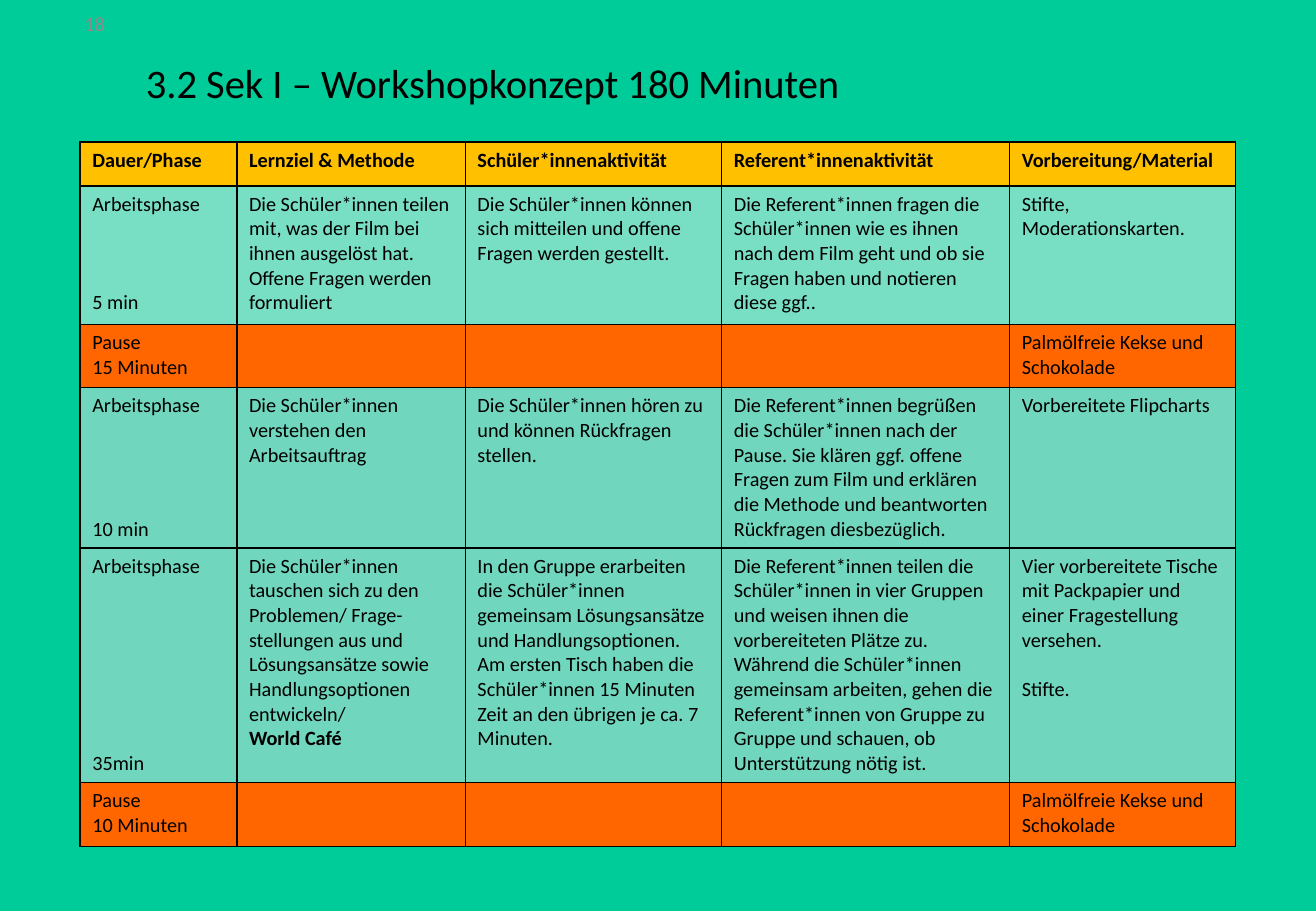
import pptx
import pptx.util
import pptx.dml.color
import pptx.enum.text
import pptx.oxml
import pptx.oxml.ns

Inches = pptx.util.Inches
Pt = pptx.util.Pt
RGBColor = pptx.dml.color.RGBColor
ALIGN = pptx.enum.text.PP_ALIGN
MIDDLE = pptx.enum.text.MSO_ANCHOR.MIDDLE

GREEN = RGBColor(0x00, 0xCC, 0x99)
AMBER = RGBColor(0xFF, 0xC0, 0x00)
ORANGE = RGBColor(0xFF, 0x66, 0x00)
PALE = RGBColor(0xF0, 0xF0, 0xF0)
SILVER = RGBColor(0xE1, 0xE1, 0xE1)
GREY = RGBColor(0x8C, 0x8C, 0x8C)
BLACK = RGBColor(0x00, 0x00, 0x00)

LINE = 14.65
SNACK = "Palmölfreie Kekse und Schokolade"
COLS = [1.29, 1.88, 2.11, 2.37, 1.86]
ROWS = [
    (0.36, AMBER, 100, 0, [
        "Dauer/Phase", "Lernziel & Methode", "Schüler*innenaktivität",
        "Referent*innenaktivität", "Vorbereitung/Material"]),
    (1.14, PALE, 50, 3, [
        "Arbeitsphase\n5 min",
        "Die Schüler*innen teilen mit, was der Film bei ihnen ausgelöst hat. "
        "Offene Fragen werden formuliert",
        "Die Schüler*innen können sich mitteilen und offene Fragen werden gestellt.",
        "Die Referent*innen fragen die Schüler*innen wie es ihnen nach dem Film geht "
        "und ob sie Fragen haben und notieren diese ggf..",
        "Stifte, Moderationskarten."]),
    (0.52, ORANGE, 100, 0, ["Pause\n15 Minuten", "", "", "", SNACK]),
    (1.32, SILVER, 50, 4, [
        "Arbeitsphase\n10 min",
        "Die Schüler*innen verstehen den Arbeitsauftrag",
        "Die Schüler*innen hören zu und können Rückfragen stellen.",
        "Die Referent*innen begrüßen die Schüler*innen nach der Pause. Sie klären ggf. "
        "offene Fragen zum Film und erklären die Methode und beantworten Rückfragen "
        "diesbezüglich.",
        "Vorbereitete Flipcharts"]),
    (1.93, SILVER, 50, 7, [
        "Arbeitsphase\n35min",
        "Die Schüler*innen tauschen sich zu den Problemen/ Frage-stellungen aus und "
        "Lösungsansätze sowie Handlungsoptionen entwickeln/\nWorld Café",
        "In den Gruppe erarbeiten die Schüler*innen gemeinsam Lösungsansätze und "
        "Handlungsoptionen. Am ersten Tisch haben die Schüler*innen 15 Minuten Zeit an "
        "den übrigen je ca. 7 Minuten.",
        "Die Referent*innen teilen die Schüler*innen in vier Gruppen und weisen ihnen "
        "die vorbereiteten Plätze zu. Während die Schüler*innen gemeinsam arbeiten, "
        "gehen die Referent*innen von Gruppe zu Gruppe und schauen, ob Unterstützung "
        "nötig ist.",
        "Vier vorbereitete Tische mit Packpapier und einer Fragestellung versehen."
        "\nStifte."]),
    (0.53, ORANGE, 100, 0, ["Pause\n10 Minuten", "", "", "", SNACK]),
]


def write(frame, text, size=12, color=BLACK, bold=False, align=ALIGN.LEFT,
          font="Calibri", gap=0, space=None):
    frame.word_wrap = True
    for i, line in enumerate(text.split("\n")):
        para = frame.add_paragraph() if i else frame.paragraphs[0]
        para.alignment = align
        if space:
            para.line_spacing = space
        if i and gap:
            para.space_before = Pt(gap * LINE)
        run = para.add_run()
        run.text = line
        run.font.name = font
        run.font.size = Pt(size)
        run.font.bold = bold
        run.font.color.rgb = color


class Page:
    def __init__(self, deck, back):
        self.slide = deck.slides.add_slide(deck.slide_layouts[5])
        self.slide.background.fill.solid()
        self.slide.background.fill.fore_color.rgb = back

    def title(self, text, left, top, width, height):
        shape = self.slide.shapes.title
        shape.left, shape.top = Inches(left), Inches(top)
        shape.width, shape.height = Inches(width), Inches(height)
        shape.text_frame.vertical_anchor = MIDDLE
        write(shape.text_frame, text, size=24, space=0.9)

    def label(self, text, left, top, width, height, **style):
        box = self.slide.shapes.add_textbox(
            Inches(left), Inches(top), Inches(width), Inches(height))
        box.text_frame.vertical_anchor = MIDDLE
        write(box.text_frame, text, **style)

    def paint(self, cell, color, alpha):
        cell.fill.solid()
        cell.fill.fore_color.rgb = color
        props = cell._tc.get_or_add_tcPr()
        space = pptx.oxml.ns.nsdecls("a")
        if alpha < 100:
            tint = props.find(".//" + pptx.oxml.ns.qn("a:srgbClr"))
            tint.append(pptx.oxml.parse_xml(
                f'<a:alpha {space} val="{alpha * 1000}"/>'))
        for i, side in enumerate("LRTB"):
            props.insert(i, pptx.oxml.parse_xml(
                f'<a:ln{side} {space} w="{Pt(1)}"><a:solidFill>'
                f'<a:srgbClr val="{BLACK}"/></a:solidFill></a:ln{side}>'))

    def table(self, rows, cols, left, top):
        height = sum(row[0] for row in rows)
        table = self.slide.shapes.add_table(
            len(rows), len(cols), Inches(left), Inches(top),
            Inches(sum(cols)), Inches(height)).table
        table.horz_banding = False
        for col, width in zip(table.columns, cols):
            col.width = Inches(width)
        for r, (tall, color, alpha, gap, texts) in enumerate(rows):
            table.rows[r].height = Inches(tall)
            for c, text in enumerate(texts):
                cell = table.cell(r, c)
                lines = {0: gap, len(cols) - 1: 1}.get(c, 0)
                write(cell.text_frame, text, bold=r == 0, gap=lines)
                self.paint(cell, color, alpha)
        return table


def main():
    deck = pptx.Presentation()
    deck.slide_width, deck.slide_height = Inches(10.83), Inches(7.5)
    page = Page(deck, GREEN)
    page.title("3.2 Sek I – Workshopkonzept 180 Minuten", 1.1, 0.36, 8.62, 0.68)
    plan = page.table(ROWS, COLS, 0.66, 1.17)
    method = plan.cell(4, 1).text_frame.paragraphs[-1]
    method.runs[0].font.bold = True
    page.label("18", -0.44, -0.01, 2.44, 0.4, color=GREY, align=ALIGN.CENTER)
    deck.save("out.pptx")


if __name__ == "__main__":
    main()
